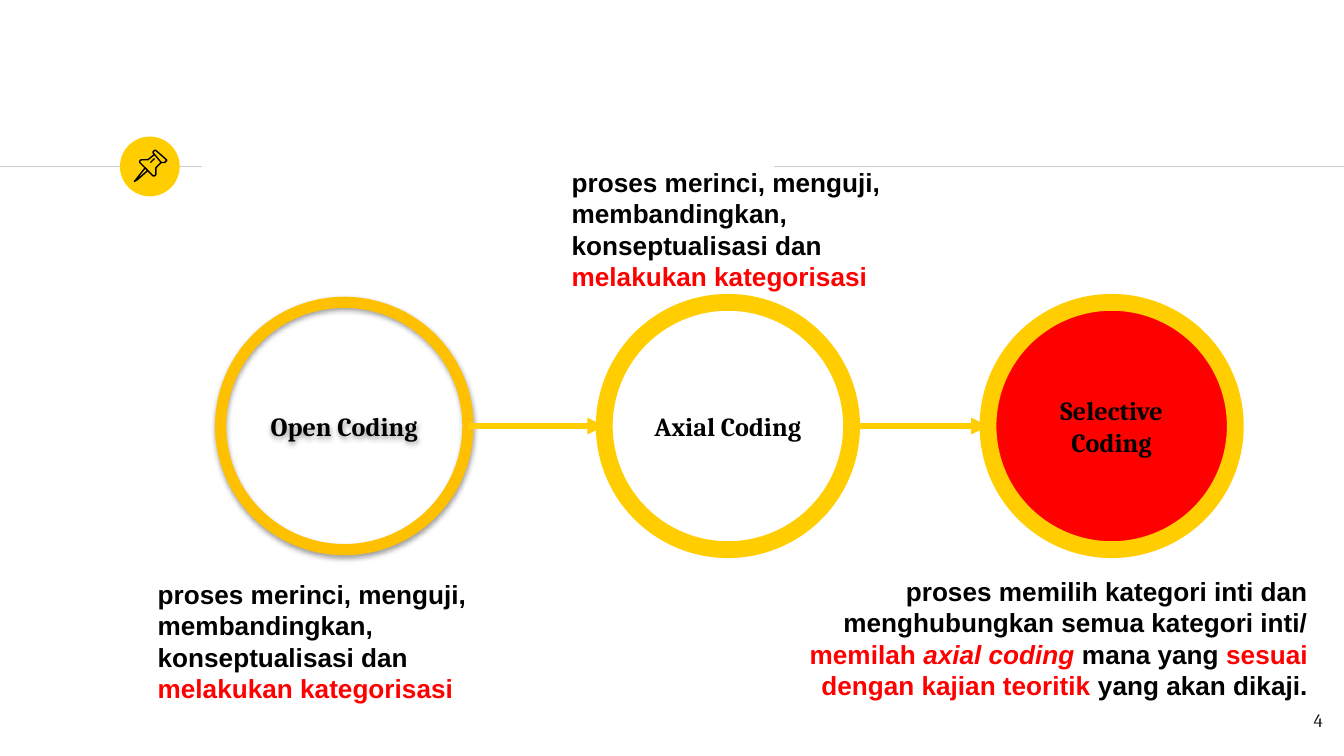
import pptx
import pptx.util
import pptx.dml.color
import pptx.enum.shapes
import pptx.enum.text
import pptx.oxml
import pptx.oxml.ns
import pptx.oxml.xmlchemy

Pt = pptx.util.Pt
ALIGN = pptx.enum.text.PP_ALIGN
SHAPE = pptx.enum.shapes.MSO_SHAPE
COLORS = {
    "black": "000000",
    "ink": "1D1D1B",
    "red": "FF0000",
    "yellow": "FFCD00",
    "amber": "FFC000",
    "rule": "CCCCCC",
}
PIN_STROKES = [
    ([(8, 13), (1, 22), (0, 23), (2, 22), (10, 15)], True),
    ([(15, 3), (20, 9), (21, 9), (23, 9), (23, 8), (24, 8), (24, 7),
      (16, 0), (15, 0), (14, 1), (14, 2)], True),
    ([(15, 3), (10, 7), (9, 7), (5, 7), (4, 8), (4, 9), (14, 19),
      (15, 19), (16, 18), (16, 13), (20, 9)], False),
    ([(12, 9), (15, 6)], False),
]
CATEGORIZING = [
    [("proses merinci, menguji, membandingkan, konseptualisasi dan", "black", False)],
    [("melakukan kategorisasi", "red", False)],
]
SELECTING = [[
    ("proses memilih kategori inti dan menghubungkan semua kategori inti/ ", "black", False),
    ("memilah ", "red", False),
    ("axial coding", "red", True),
    (" mana yang ", "black", False),
    ("sesuai dengan kajian teoritik", "red", False),
    (" yang akan dikaji.", "black", False),
]]
STAGES = [
    ("Open Coding", None, "amber", 6, True),
    ("Axial Coding", None, "yellow", 9, False),
    ("Selective Coding", "red", "yellow", 9, False),
]


def rgb(name):
    """Return the named colour."""
    return pptx.dml.color.RGBColor.from_string(COLORS[name])


def add_span(para, text, color, size, font, bold=False, italic=False):
    """Add one formatted run to a paragraph."""
    span = para.add_run()
    span.text = text
    span.font.size, span.font.name = Pt(size), font
    span.font.bold, span.font.italic = bold, italic
    span.font.color.rgb = rgb(color)


def style_shape(shape, fill=None, line=None, width=0.75):
    """Set fill and outline and remove the shadow."""
    shape.shadow.inherit = False
    if fill:
        shape.fill.solid()
        shape.fill.fore_color.rgb = rgb(fill)
    else:
        shape.fill.background()
    if line:
        shape.line.color.rgb = rgb(line)
        shape.line.width = Pt(width)
    else:
        shape.line.fill.background()


def add_line(page, start, end, y, color, width, arrow=False):
    """Draw a horizontal line, with an arrowhead if asked."""
    line = page.shapes.add_connector(
        pptx.enum.shapes.MSO_CONNECTOR.STRAIGHT, Pt(start), Pt(y), Pt(end), Pt(y))
    line.line.color.rgb = rgb(color)
    line.line.width = Pt(width)
    if arrow:
        head = pptx.oxml.xmlchemy.OxmlElement("a:tailEnd")
        head.set("type", "triangle")
        line.line._get_or_add_ln().append(head)
    line._element.spPr.append(pptx.oxml.xmlchemy.OxmlElement("a:effectLst"))


def add_soft_shadow(shape):
    """Give a shape a soft shadow straight below it."""
    effects = shape._element.spPr.find(pptx.oxml.ns.qn("a:effectLst"))
    effects.append(pptx.oxml.parse_xml(
        f'<a:outerShdw {pptx.oxml.ns.nsdecls("a")} blurRad="{Pt(3.1)}" '
        f'dist="{Pt(1.6)}" dir="5400000" rotWithShape="0"><a:srgbClr '
        f'val="{COLORS["black"]}"><a:alpha val="38000"/></a:srgbClr></a:outerShdw>'))


def add_pin(page, left, top, unit):
    """Draw the pushpin on a grid of the given unit."""
    for points, closed in PIN_STROKES:
        builder = page.shapes.build_freeform(*points[0], scale=Pt(unit))
        builder.add_line_segments(points[1:], close=closed)
        style_shape(builder.convert_to_shape(Pt(left), Pt(top)), line="black")


def add_header(page, left, y, width):
    """Draw the divider with its pinned badge."""
    badge = 32
    add_line(page, left, left + 108, y, "rule", 0.75)
    disc = page.shapes.add_shape(
        SHAPE.OVAL, Pt(left + 64.25), Pt(y - badge / 2), Pt(badge), Pt(badge))
    style_shape(disc, fill="yellow")
    add_line(page, left + 414.6, left + width, y, "rule", 0.75)
    add_pin(page, left + 72, y - 8.6, 0.72)


def add_stages(page, left, top, width, size):
    """Spread the stage circles over the width and link them with arrows."""
    pitch = (width - size) / (len(STAGES) - 1)
    for index, (name, fill, line, weight, shadow) in enumerate(STAGES):
        x = left + index * pitch
        circle = page.shapes.add_shape(SHAPE.OVAL, Pt(x), Pt(top), Pt(size), Pt(size))
        style_shape(circle, fill, line, weight)
        if shadow:
            add_soft_shadow(circle)
        frame = circle.text_frame
        frame.word_wrap = True
        frame.vertical_anchor = pptx.enum.text.MSO_ANCHOR.MIDDLE
        frame.margin_left = frame.margin_right = Pt(7.2)
        frame.margin_top = frame.margin_bottom = Pt(7.2)
        para = frame.paragraphs[0]
        para.alignment = ALIGN.CENTER
        add_span(para, name, "black", 14, "Cambria", bold=True)
    for index in range(len(STAGES) - 1):
        x = left + index * pitch
        add_line(page, x + size, x + pitch, top + size / 2, "yellow", 3, arrow=True)


def add_note(page, left, top, width, height, paragraphs, align=ALIGN.LEFT):
    """Write an explanatory note in bold."""
    box = page.shapes.add_textbox(Pt(left), Pt(top), Pt(width), Pt(height))
    frame = box.text_frame
    frame.word_wrap = True
    for index, spans in enumerate(paragraphs):
        para = frame.add_paragraph() if index else frame.paragraphs[0]
        para.alignment = align
        for text, color, italic in spans:
            add_span(para, text, color, 14, "Arial", bold=True, italic=italic)


def add_page_number(page, left, top, width, height, number):
    """Write the page number."""
    box = page.shapes.add_textbox(Pt(left), Pt(top), Pt(width), Pt(height))
    frame = box.text_frame
    frame.word_wrap = True
    frame.margin_top = frame.margin_bottom = Pt(7.2)
    para = frame.paragraphs[0]
    para.alignment = ALIGN.RIGHT
    add_span(para, number, "ink", 10, "Cambria")


def main():
    """Build and save the deck."""
    deck = pptx.Presentation()
    deck.slide_width, deck.slide_height = Pt(720), Pt(405)
    page = deck.slides.add_slide(deck.slide_layouts[6])
    add_header(page, 0, 89.2, 720)
    add_stages(page, 118.2, 162, 543.6, 132.5)
    add_page_number(page, 672.5, 373.7, 43.2, 31, "4")
    add_note(page, 299.2, 85.6, 222, 75, CATEGORIZING)
    add_note(page, 77.4, 306.2, 222, 75, CATEGORIZING)
    add_note(page, 415.4, 304.6, 292.3, 75, SELECTING, ALIGN.RIGHT)
    deck.save("out.pptx")


if __name__ == "__main__":
    main()
